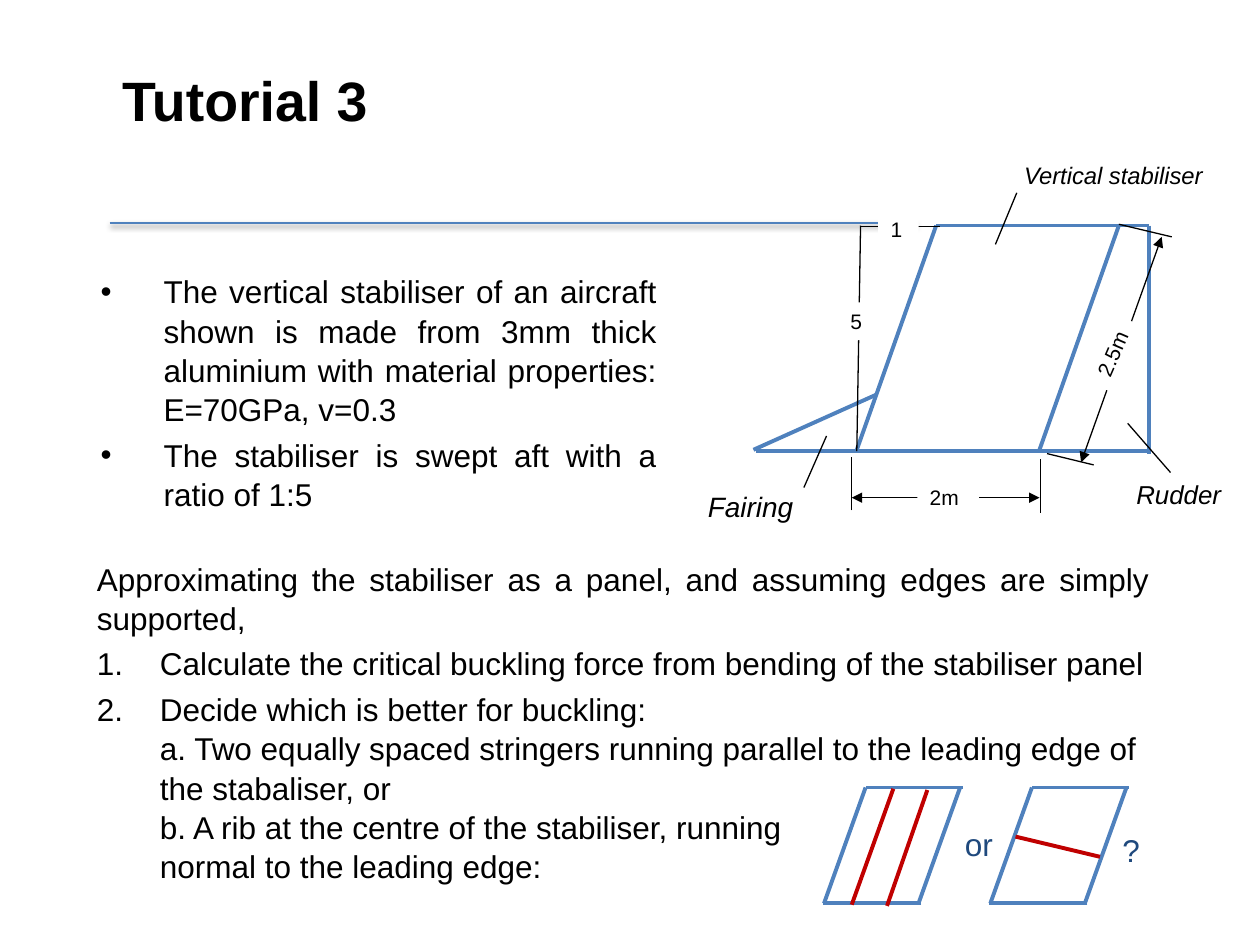
from lxml import etree
from pptx import Presentation
from pptx.dml.color import RGBColor
from pptx.enum import shapes as kinds, text as txt
from pptx.oxml import ns
from pptx.util import Pt

PX = 9144  # EMU per px, 100 px to the inch
COLORS = {"ink": "000000", "paper": "FFFFFF", "outline": "4F81BD",
          "stiffener": "C00000", "question": "1F497D"}
BULLET = ("buChar", {"char": "•"})
NUMBER = ("buAutoNum", {"type": "arabicPeriod"})


def rgb(name):
    return RGBColor.from_string(COLORS[name])


def emu(*lengths):
    return [length * PX for length in lengths]


def sub(parent, tag, **attributes):
    return etree.SubElement(parent, ns.qn("a:" + tag), attributes)


def add_line(shapes, origin, ends, color="ink", width=0.75, arrows=False):
    x, y = origin
    x1, y1, x2, y2 = ends
    line = shapes.add_connector(kinds.MSO_CONNECTOR.STRAIGHT,
                                *emu(x + x1, y + y1, x + x2, y + y2))
    line.line.color.rgb = rgb(color)
    line.line.width = Pt(width)
    if arrows:
        for end in ("headEnd", "tailEnd"):
            sub(line.line._ln, end, type="triangle")
    return line, sub(line._element.spPr, "effectLst")


def write(frame, paragraphs, size, color="ink", spacing=None, **font):
    """Fill a frame with (text, bullet, alignment) paragraphs."""
    for i, (words, bullet, align) in enumerate(paragraphs):
        para = frame.paragraphs[0] if i == 0 else frame.add_paragraph()
        para.text = words
        para.alignment = align
        if spacing:
            para.line_spacing = spacing
        if i:
            para.space_before = Pt(size * 0.2)
        if bullet:
            props = para._p.get_or_add_pPr()
            props.set("marL", str(50 * PX))
            props.set("indent", str(-50 * PX))
            sub(props, "buFont", typeface="Arial")
            sub(props, bullet[0], **bullet[1])
        for run in para.runs:
            for key, value in {"name": "Arial", "size": Pt(size), **font}.items():
                setattr(run.font, key, value)
            run.font.color.rgb = rgb(color)


def add_text(slide, box, paragraphs, size, **style):
    frame = slide.shapes.add_textbox(*emu(*box)).text_frame
    frame.word_wrap = True
    write(frame, paragraphs, size, **style)


def add_caption(slide, box, words, size, **style):
    add_text(slide, box, [(words, None, txt.PP_ALIGN.LEFT)], size, **style)


def add_label(slide, box, words, rotation=0):
    """Dimension value on a white patch that interrupts its line."""
    label = slide.shapes.add_shape(kinds.MSO_SHAPE.RECTANGLE, *emu(*box))
    label.shadow.inherit = False
    label.fill.solid()
    label.fill.fore_color.rgb = rgb("paper")
    label.line.fill.background()
    label.rotation = rotation
    frame = label.text_frame
    frame.word_wrap = False
    frame.vertical_anchor = txt.MSO_ANCHOR.TOP
    write(frame, [(words, None, txt.PP_ALIGN.LEFT)], 12)


def heading(slide, box):
    x, y, width, height = box
    title = slide.shapes.title
    title.left, title.top, title.width, title.height = emu(*box)
    title.text_frame.vertical_anchor = txt.MSO_ANCHOR.TOP
    write(title.text_frame, [("Tutorial 3", None, txt.PP_ALIGN.LEFT)], 31.7,
          spacing=1.04, bold=True)
    # Shadowed rule under the title
    _, effects = add_line(slide.shapes, (x, y), (0, 132, 640, 132), "outline", 1.25)
    shadow = sub(effects, "outerShdw", blurRad=str(Pt(3.1)), dist=str(Pt(1.6)),
                 dir="5400000", rotWithShape="0")
    sub(sub(shadow, "srgbClr", val=COLORS["ink"]), "alpha", val="38000")


def stabiliser(slide, box):
    x, y = box[:2]
    outline = [
        (48, 237, 146, 193),   # fairing
        (362, 59, 193, 59),    # tip
        (362, 59, 362, 240),   # rudder trailing edge
        (338, 59, 275, 237),   # rudder hinge
        (361, 238, 50, 238),   # root
        (193, 59, 130, 237),   # leading edge
    ]
    dimensions = [(275, 275, 126, 275), (308, 247, 372, 68)]
    thin = [
        (379, 255, 345, 216), (88, 267, 106, 226), (240, 74, 257, 33),  # leaders
        (126, 285, 126, 243), (276, 287, 276, 244),  # chord witness lines
        (318, 249, 281, 240), (380, 68, 338, 58),    # span witness lines
        (130, 238, 133, 59), (133, 60, 196, 60),     # sweep ratio
    ]
    for ends in outline:
        add_line(slide.shapes, (x, y), ends, "outline", 2.25)
    for ends in dimensions:
        add_line(slide.shapes, (x, y), ends, arrows=True)
    for ends in thin:
        add_line(slide.shapes, (x, y), ends)
    for words, dx, dy, width, rotation in [
            ("2m", 178, 260, 49, 0), ("2.5m", 304, 145, 58, 293.5),
            ("1", 147, 47, 32, 0), ("5", 115, 120, 32, 0)]:
        add_label(slide, (x + dx, y + dy, width, 30), words, rotation)
    for words, dx, dy, width, size in [
            ("Rudder", 342, 255, 91, 14.8), ("Fairing", 2, 264, 91, 16),
            ("Vertical stabiliser", 253, 3, 169, 13.6)]:
        add_caption(slide, (x + dx, y + dy, width, 43), words, size, italic=True)


def problem(slide, box):
    justify = txt.PP_ALIGN.JUSTIFY
    add_text(slide, box, [
        ("The vertical stabiliser of an aircraft shown is made from 3mm thick "
         "aluminium with material properties:\vE=70GPa, v=0.3 ", BULLET, justify),
        ("The stabiliser is swept aft with a ratio of 1:5", BULLET, justify),
    ], 18, spacing=1.04)


def questions(slide, box):
    justify = txt.PP_ALIGN.JUSTIFY
    add_text(slide, box, [
        ("Approximating the stabiliser as a panel, and assuming edges are simply "
         "supported,", None, justify),
        ("Calculate the critical buckling force from bending of the stabiliser panel",
         NUMBER, justify),
        ("Decide which is better for buckling:\v"
         "a. Two equally spaced stringers running parallel to the leading edge of "
         "the stabaliser, or\v"
         "b. A rib at the centre of the stabiliser, running\v"
         "normal to the leading edge:", NUMBER, txt.PP_ALIGN.LEFT),
    ], 18, spacing=1.04)


def panel(slide, origin, stiffeners):
    group = slide.shapes.add_group_shape()
    for ends in [(111, 0, 34, 0), (109, 0, 76, 92), (78, 92, 0, 92), (34, 0, 1, 92)]:
        add_line(group.shapes, origin, ends, "outline", 2.25)
    for ends in stiffeners:
        add_line(group.shapes, origin, ends, "stiffener", 2.25)


def options(slide, box):
    x, y = box[:2]
    panel(slide, (x, y), [(56, 1, 23, 93), (83, 2, 51, 94)])  # stringers
    panel(slide, (x + 132, y), [(21, 39, 88, 55)])            # rib
    for words, dx, dy in [("or", 103, 25), ("?", 228, 30)]:
        add_caption(slide, (x + dx, y + dy, 50, 43), words, 18, color="question")


def main():
    deck = Presentation()
    deck.slide_width, deck.slide_height = emu(1000, 750)
    slide = deck.slides.add_slide(deck.slide_layouts[5])
    heading(slide, (87, 45, 843, 143))
    problem(slide, (70, 210, 461, 208))
    stabiliser(slide, (550, 120, 433, 307))
    questions(slide, (67, 438, 855, 135))
    options(slide, (653, 625, 278, 94))
    deck.save("out.pptx")


if __name__ == "__main__":
    main()
